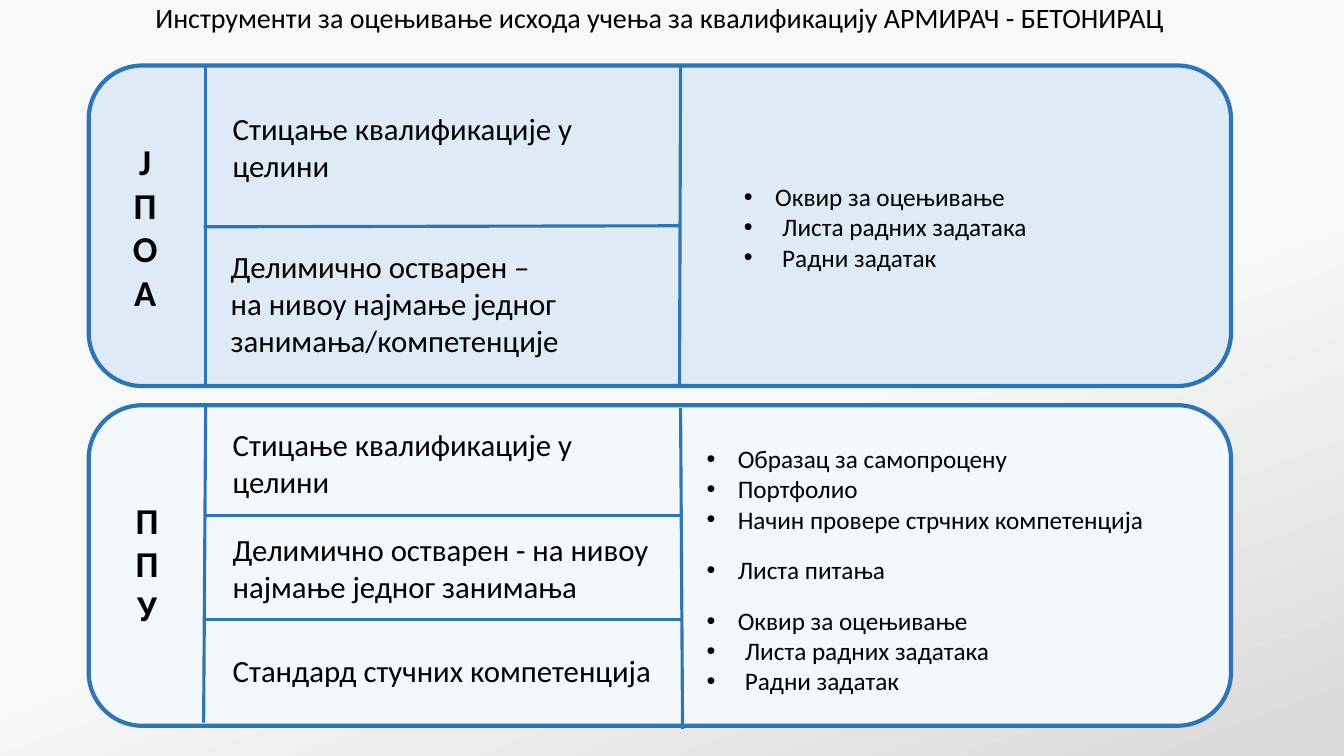
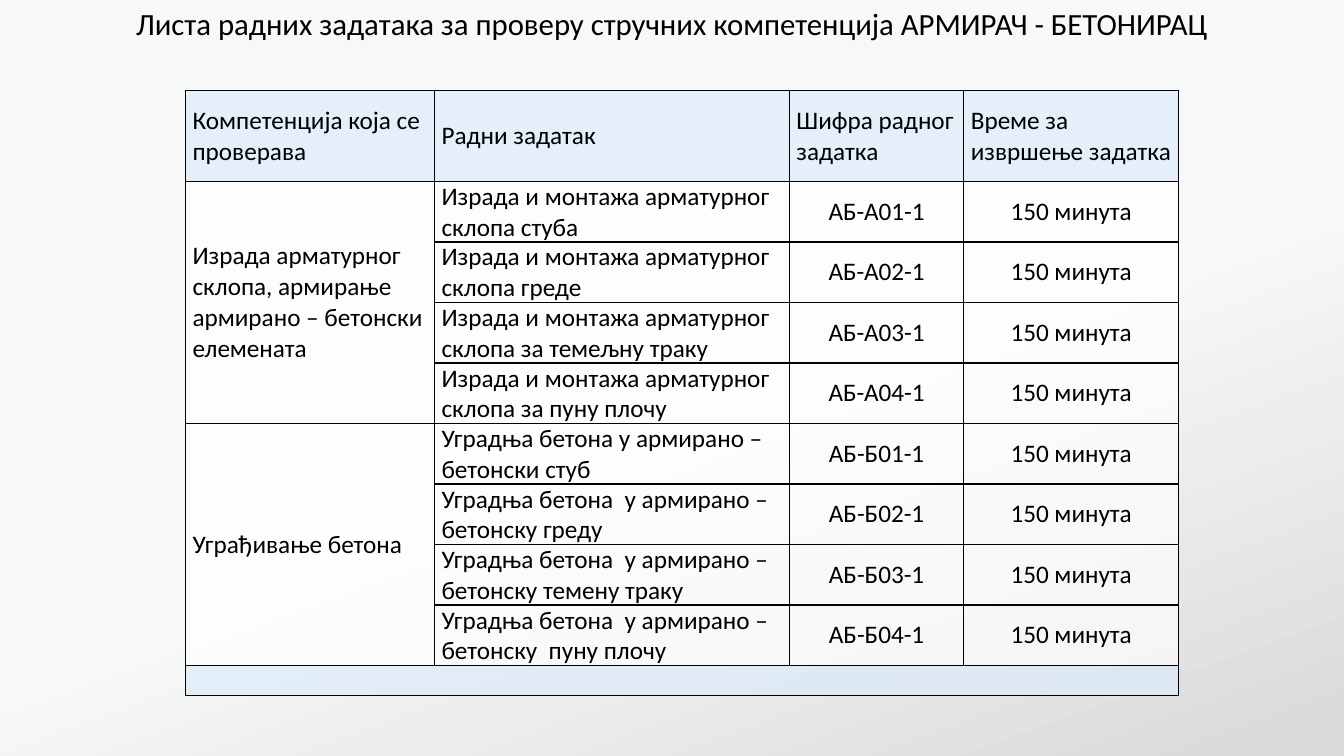
from lxml.etree import SubElement
from pptx import Presentation
from pptx.dml.color import RGBColor
from pptx.enum.shapes import MSO_CONNECTOR, MSO_SHAPE
from pptx.enum.text import MSO_ANCHOR, PP_ALIGN
from pptx.oxml import parse_xml
from pptx.oxml.ns import nsdecls, qn
from pptx.util import Pt

PX = 9144  # 100 px to the inch
FONT = "Calibri"
HEX = {"text": "000000", "line": "2E75B6", "deep": "DEEBF7", "pale": "F3F8FC",
       "head": "DBEBFA", "body": "FFFFFF", "rule": "080000",
       "grey": "D9D9D9", "mist": "F7F9F8"}
RGB = {name: RGBColor.from_string(code) for name, code in HEX.items()}


def put(frame, text, size=18, bold=False, align=PP_ALIGN.LEFT, dents=(), gaps=()):
    """Write one paragraph per line; dents make bullets, gaps map line to space."""
    frame.word_wrap = True
    for i, line in enumerate(text.split("\n")):
        para = frame.paragraphs[0] if i == 0 else frame.add_paragraph()
        para.alignment = align
        if dents:
            props = para._p.get_or_add_pPr()
            props.set("marL", str(dents[i] * PX))
            props.set("indent", str(-dents[i] * PX))
            SubElement(props, qn("a:buFont"), typeface="Arial")
            SubElement(props, qn("a:buChar"), char="•")
        if i in gaps:
            para.space_before = Pt(gaps[i])
        run = para.add_run()
        run.text = line
        run.font.name, run.font.size, run.font.bold = FONT, Pt(size), bold
        run.font.color.rgb = RGB["text"]


def fade(root, share):
    """Make every plain colour under root see-through."""
    for tint in root.iter(qn("a:srgbClr")):
        SubElement(tint, qn("a:alpha"), val=str(share * 1000))


deck = Presentation()
deck.slide_width, deck.slide_height = 1333 * PX, 750 * PX

# Shared background
master = deck.slide_master
back = master.background.fill
back.gradient()
back.gradient_angle = 110
near, far = back.gradient_stops
far.color.rgb, far.position = RGB["mist"], 0.45
fade(master.element.cSld.bg, 58)
near.color.rgb, near.position = RGB["grey"], 0

# Slides with their titles
titles = [
    (-12, -4, 20, "Инструменти за оцењивање исхода учења за квалификацију АРМИРАЧ - БЕТОНИРАЦ"),
    (0, 0, 22, "Листа радних задатака за проверу стручних компетенција АРМИРАЧ - БЕТОНИРАЦ"),
]
slides = []
for x, y, size, text in titles:
    slide = deck.slides.add_slide(deck.slide_layouts[6])
    box = slide.shapes.add_textbox(x * PX, y * PX, 1333 * PX, 45 * PX)
    put(box.text_frame, text, size=size, align=PP_ALIGN.CENTER)
    slides.append(slide)
chart, tasks = slides

# Panels
for y, tone in [(402, "pale"), (65, "deep")]:
    panel = chart.shapes.add_shape(
        MSO_SHAPE.ROUNDED_RECTANGLE, 88 * PX, y * PX, 1133 * PX, 318 * PX)
    panel.shadow.inherit = False
    panel.fill.solid()
    panel.fill.fore_color.rgb = RGB[tone]
    panel.line.color.rgb = RGB["line"]
    panel.line.width = Pt(3)

# Dividers
for ends in [(204, 64, 204, 382), (204, 402, 202, 717),
             (675, 64, 674, 382), (675, 405, 677, 723),
             (202, 225, 675, 224), (202, 615, 675, 615), (202, 511, 677, 511)]:
    rule = chart.shapes.add_connector(
        MSO_CONNECTOR.STRAIGHT, *[end * PX for end in ends])
    rule.line.color.rgb = RGB["line"]
    rule.line.width = Pt(2.25)
    SubElement(rule._element.spPr, qn("a:effectLst"))

# Panel texts
side = {"size": 26, "bold": True, "align": PP_ALIGN.CENTER}
mid = {"size": 22}
whole = "Стицање квалификације у целини"
tools = "Оквир за оцењивање\nЛиста радних задатака\nРадни задатак"
steps = [31, 38, 38]
proofs = ("Образац за самопроцену\nПортфолио\n"
          "Начин провере стрчних компетенција\nЛиста питања\n")
for x, y, w, h, text, look in [
    (86, 133, 116, 185, "Ј\nП\nО\nА", side),
    (88, 489, 116, 141, "П\nП\nУ", side),
    (221, 104, 435, 84, whole, mid),
    (219, 241, 435, 121,
     "Делимично остварен –\nна нивоу најмање једног занимања/компетенције", mid),
    (221, 417, 454, 84, whole, mid),
    (221, 522, 454, 84, "Делимично остварен - на нивоу најмање једног занимања", mid),
    (221, 642, 454, 47, "Стандард стучних компетенција", mid),
    (728, 175, 429, 101, tools, {"dents": steps}),
    (691, 435, 504, 313, proofs + tools,
     {"dents": [31] * 4 + steps, "gaps": {3: 14.6, 4: 14.6}}),
]:
    box = chart.shapes.add_textbox(x * PX, y * PX, w * PX, h * PX)
    put(box.text_frame, text, **look)

# Task table
heads = ["Компетенција која се проверава", "Радни задатак",
         "Шифра радног задатка", "Време за извршење задатка"]
groups = [
    ("А", "Израда арматурног склопа, армирање армирано – бетонски елемената",
     ["Израда и монтажа арматурног склопа стуба",
      "Израда и монтажа арматурног склопа греде",
      "Израда и монтажа арматурног склопа за темељну траку",
      "Израда и монтажа арматурног склопа за пуну плочу"]),
    ("Б", "Уграђивање бетона",
     ["Уградња бетона у армирано – бетонски стуб",
      "Уградња бетона  у армирано – бетонску греду",
      "Уградња бетона  у армирано – бетонску темену траку",
      "Уградња бетона  у армирано – бетонску  пуну плочу"]),
]
rows = [heads]
for mark, skill, jobs in groups:
    for n, job in enumerate(jobs, 1):
        rows.append([skill if n == 1 else "", job, f"АБ-{mark}0{n}-1", "150 минута"])
rows.append([""] * 4)
last = len(rows) - 1

grid = tasks.shapes.add_table(
    len(rows), 4, 184 * PX, 90 * PX, 985 * PX, 600 * PX).table
grid.first_row = grid.horz_banding = False
for col, w in zip(grid.columns, [247, 352, 173, 213]):
    col.width = w * PX
for r, row in enumerate(rows):
    grid.rows[r].height = {0: 90, last: 30}.get(r, 60) * PX
    for c, text in enumerate(row):
        cell = grid.cell(r, c)
        inner = 0 < r < last
        cell.margin_left = cell.margin_right = 7 * PX
        cell.margin_top = cell.margin_bottom = 0
        cell.vertical_anchor = MSO_ANCHOR.TOP if inner and c == 1 else MSO_ANCHOR.MIDDLE
        if text:
            put(cell.text_frame, text,
                align=PP_ALIGN.CENTER if inner and c > 1 else PP_ALIGN.LEFT)
        cell.fill.solid()
        cell.fill.fore_color.rgb = RGB["body" if inner else "head"]
        props = cell._tc.get_or_add_tcPr()
        fade(props, 68)
        for i, edge in enumerate("LRTB"):
            props.insert(i, parse_xml(
                f'<a:ln{edge} {nsdecls("a")} w="12700"><a:solidFill>'
                f'<a:srgbClr val="{HEX["rule"]}"/></a:solidFill></a:ln{edge}>'))
for top in (1, 5):
    grid.cell(top, 0).merge(grid.cell(top + 3, 0))
grid.cell(last, 0).merge(grid.cell(last, 3))

deck.save("out.pptx")
